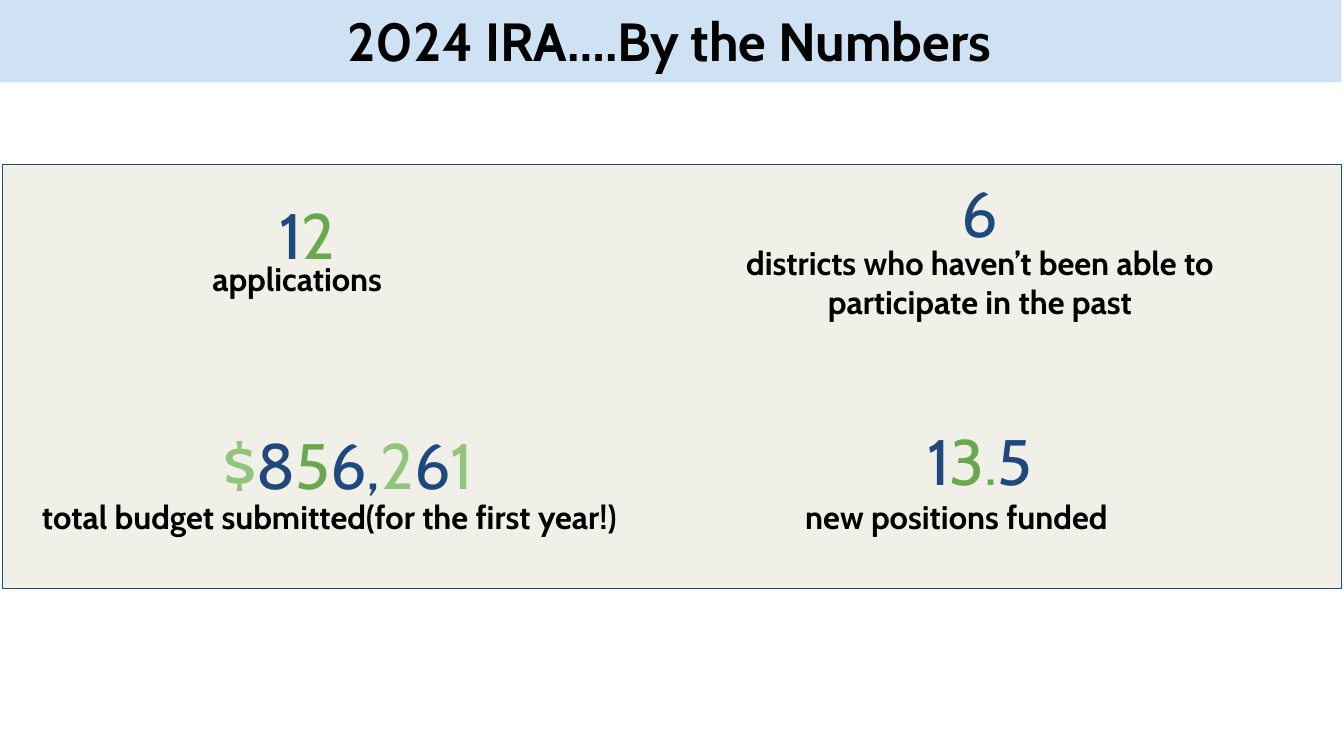
import pptx
import pptx.dml.color
import pptx.enum.shapes
import pptx.enum.text
import pptx.util

Cm = pptx.util.Cm
ALIGN = pptx.enum.text.PP_ALIGN
FONT = "Cabin"
BLACK, NAVY, GREEN, LIGHT_GREEN = "000000", "1F497D", "6AA84F", "93C47D"
INSET = 0.25


def paint(color_format, hex_color):
    """Give a fill or font colour its RGB value."""
    color_format.rgb = pptx.dml.color.RGBColor.from_string(hex_color)


def write(frame, runs, size, bold, align):
    """Fill a text frame with one paragraph of coloured runs."""
    frame.word_wrap = True
    frame.auto_size = pptx.enum.text.MSO_AUTO_SIZE.NONE
    frame.vertical_anchor = pptx.enum.text.MSO_ANCHOR.TOP
    frame.margin_left = frame.margin_right = Cm(INSET)
    frame.margin_top = frame.margin_bottom = Cm(INSET)
    paragraph = frame.paragraphs[0]
    paragraph.alignment = align
    paragraph.line_spacing = 1.0
    paragraph.font.name = FONT
    paragraph.font.size = pptx.util.Pt(size)
    paragraph.font.bold = bold
    for text, color in runs:
        run = paragraph.add_run()
        run.text = text
        paint(run.font.color, color)


def add_heading(slide, box):
    """Place the title as a pale blue band."""
    heading = slide.shapes.title
    heading.left, heading.top, heading.width, heading.height = map(Cm, box)
    heading.fill.solid()
    paint(heading.fill.fore_color, "CFE2F3")
    write(heading.text_frame, [("2024 IRA….By the Numbers", BLACK)], 46, True, ALIGN.CENTER)


def add_panel(slide, box):
    """Draw the panel behind the statistics."""
    panel = slide.shapes.add_shape(pptx.enum.shapes.MSO_SHAPE.RECTANGLE, *map(Cm, box))
    panel.shadow.inherit = False
    panel.fill.solid()
    paint(panel.fill.fore_color, "F1F0E8")
    paint(panel.line.color, NAVY)
    panel.line.width = pptx.util.Pt(0.75)


def add_statistic(slide, box, number, number_offset, number_width, caption, drop, align=ALIGN.LEFT):
    """Place a large number at the top of the box and its caption below."""
    left, top, width, height = box
    number_box = left + number_offset, top, number_width, 2.87
    caption_box = left, top + drop, width, height - drop
    for part_box, runs, size, bold, part_align in (
        (number_box, number, 55, False, ALIGN.CENTER),
        (caption_box, [(caption, BLACK)], 28, True, align),
    ):
        part = slide.shapes.add_textbox(*map(Cm, part_box))
        write(part.text_frame, runs, size, bold, part_align)


def main():
    """Build and save the slide."""
    deck = pptx.Presentation()
    deck.slide_width, deck.slide_height = Cm(40.64), Cm(22.86)
    slide = deck.slides.add_slide(deck.slide_layouts[5])
    add_heading(slide, (-0.08, 0, 40.64, 2.49))
    add_panel(slide, (0.08, 4.98, 40.49, 12.8))
    add_statistic(slide, (6.17, 5.66, 6.22, 3.76), [("1", NAVY), ("2", GREEN)],
                  1.7, 2.84, "applications", 1.93)
    add_statistic(slide, (21.26, 5, 16.74, 4.99), [("6", NAVY)], 7.44, 1.88,
                  "districts who haven’t been able to participate in the past", 2.09, ALIGN.CENTER)
    budget = [("$", LIGHT_GREEN), ("8", NAVY), ("5", GREEN), ("6,", NAVY),
              ("2", LIGHT_GREEN), ("6", NAVY), ("1", LIGHT_GREEN)]
    add_statistic(slide, (1.02, 12.62, 26.54, 3.84), budget, 3.76, 11.51,
                  "total budget submitted(for the first year!)", 2.14)
    add_statistic(slide, (24.1, 12.5, 11.02, 3.96), [("1", NAVY), ("3.", GREEN), ("5", NAVY)],
                  3.08, 4.9, "new positions funded", 2.26)
    deck.save("out.pptx")


if __name__ == "__main__":
    main()
